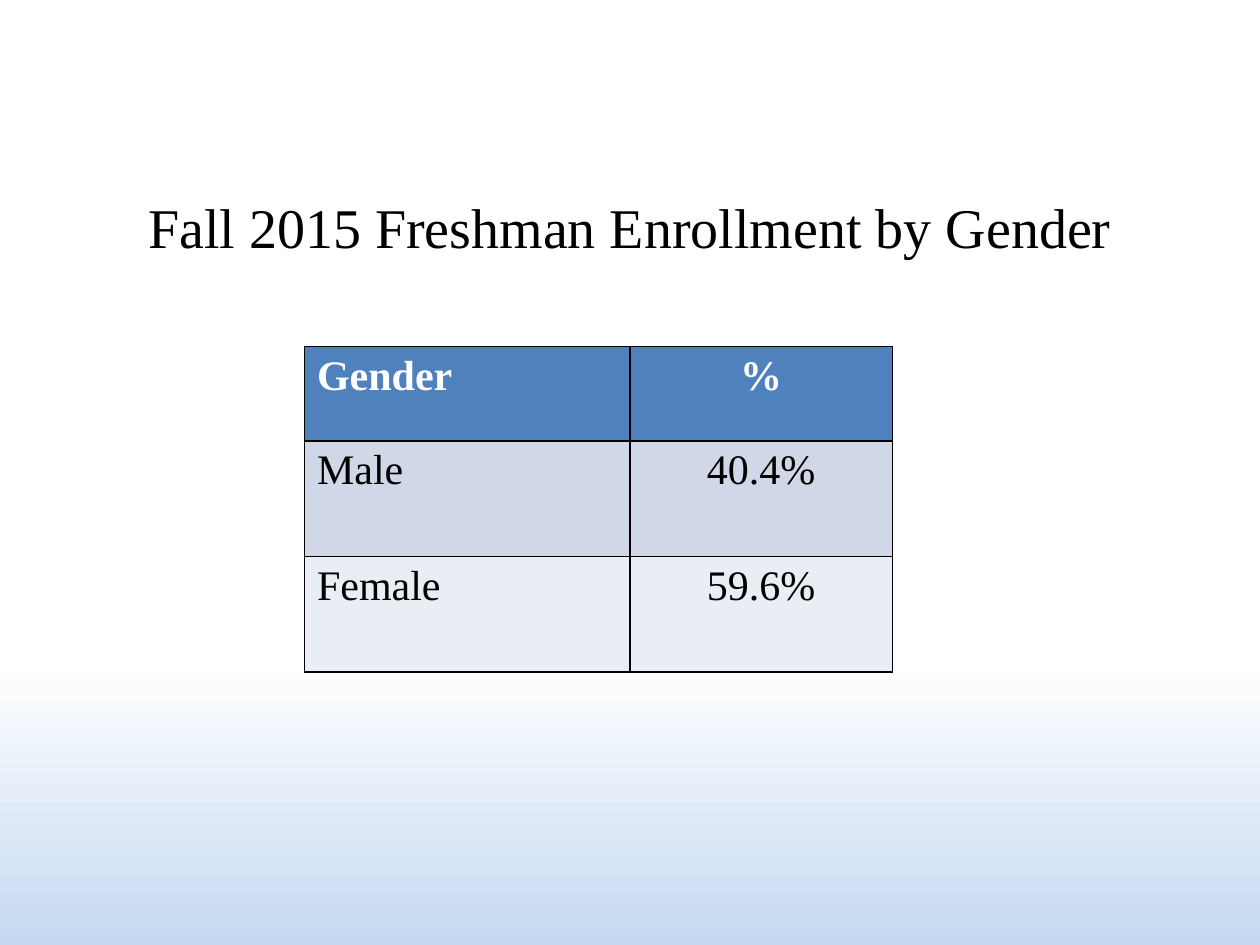
from lxml import etree
from pptx import Presentation
from pptx.dml.color import RGBColor
from pptx.enum.text import MSO_ANCHOR, PP_ALIGN
from pptx.oxml.ns import qn
from pptx.util import Inches, Pt

LEFT, CENTER = PP_ALIGN.LEFT, PP_ALIGN.CENTER
MIDDLE = MSO_ANCHOR.MIDDLE
TITLE_ONLY = 5

COLORS = {
    "text": "000000",
    "white": "FFFFFF",
    "sky": "C6D9F1",
    "header": "4F81BD",
    "band_dark": "D0D8E8",
    "band_light": "E9EDF4",
    "border": "000000",
}


def rgb(name):
    return RGBColor.from_string(COLORS[name])


def grid(n):
    """Length of n grid units, twelve to the inch."""
    return Inches(n / 12)


class SlideBuilder:
    font = "Times New Roman"
    title_size = 32
    table_size = 24

    def __init__(self, prs):
        self.slide = prs.slides.add_slide(prs.slide_layouts[TITLE_ONLY])

    def background(self, stops):
        fill = self.slide.background.fill
        fill.gradient()
        fill.gradient_angle = 270
        for stop, (position, color) in zip(fill.gradient_stops, stops):
            stop.position = position
            stop.color.rgb = rgb(color)

    def add_text(self, tf, text, size, color="text", bold=False, align=LEFT):
        p = tf.paragraphs[0]
        p.alignment = align
        r = p.add_run()
        r.text = text
        r.font.name = self.font
        r.font.size = Pt(size)
        r.font.bold = bold
        r.font.color.rgb = rgb(color)

    def title(self, text, left, top, width, height):
        sp = self.slide.shapes.title
        sp.left, sp.top = grid(left), grid(top)
        sp.width, sp.height = grid(width), grid(height)
        tf = sp.text_frame
        tf.word_wrap = True
        tf.vertical_anchor = MIDDLE
        tf.margin_left = tf.margin_right = 0
        self.add_text(tf, text, self.title_size, align=CENTER)

    def borders(self, cell):
        tc_pr = cell._tc.get_or_add_tcPr()
        for i, side in enumerate(("a:lnL", "a:lnR", "a:lnT", "a:lnB")):
            ln = etree.Element(qn(side), w=str(Pt(1)))
            fill = etree.SubElement(ln, qn("a:solidFill"))
            etree.SubElement(fill, qn("a:srgbClr"), val=COLORS["border"])
            tc_pr.insert(i, ln)

    def table(self, rows, left, top, widths, heights, fills, aligns):
        """Draw a table whose first row is the header."""
        table = self.slide.shapes.add_table(
            len(rows), len(widths), grid(left), grid(top),
            grid(sum(widths)), grid(sum(heights))).table
        for column, width in zip(table.columns, widths):
            column.width = grid(width)
        for i, (values, height) in enumerate(zip(rows, heights)):
            table.rows[i].height = grid(height)
            header = i == 0
            for j, value in enumerate(values):
                cell = table.cell(i, j)
                cell.fill.solid()
                cell.fill.fore_color.rgb = rgb(fills[i])
                self.borders(cell)
                self.add_text(cell.text_frame, value, self.table_size,
                              "white" if header else "text", header, aligns[j])


def main():
    prs = Presentation()
    prs.slide_width, prs.slide_height = Inches(10), Inches(7.5)

    s = SlideBuilder(prs)
    s.background([(0.7, "white"), (1, "sky")])
    s.title("Fall 2015 Freshman Enrollment by Gender", 6, 14, 108, 15)
    s.table(
        [("Gender", "%"), ("Male", "40.4%"), ("Female", "59.6%")],
        left=29, top=33, widths=(31, 25), heights=(9, 11, 11),
        fills=("header", "band_dark", "band_light"), aligns=(LEFT, CENTER))

    prs.save("out.pptx")


if __name__ == "__main__":
    main()
